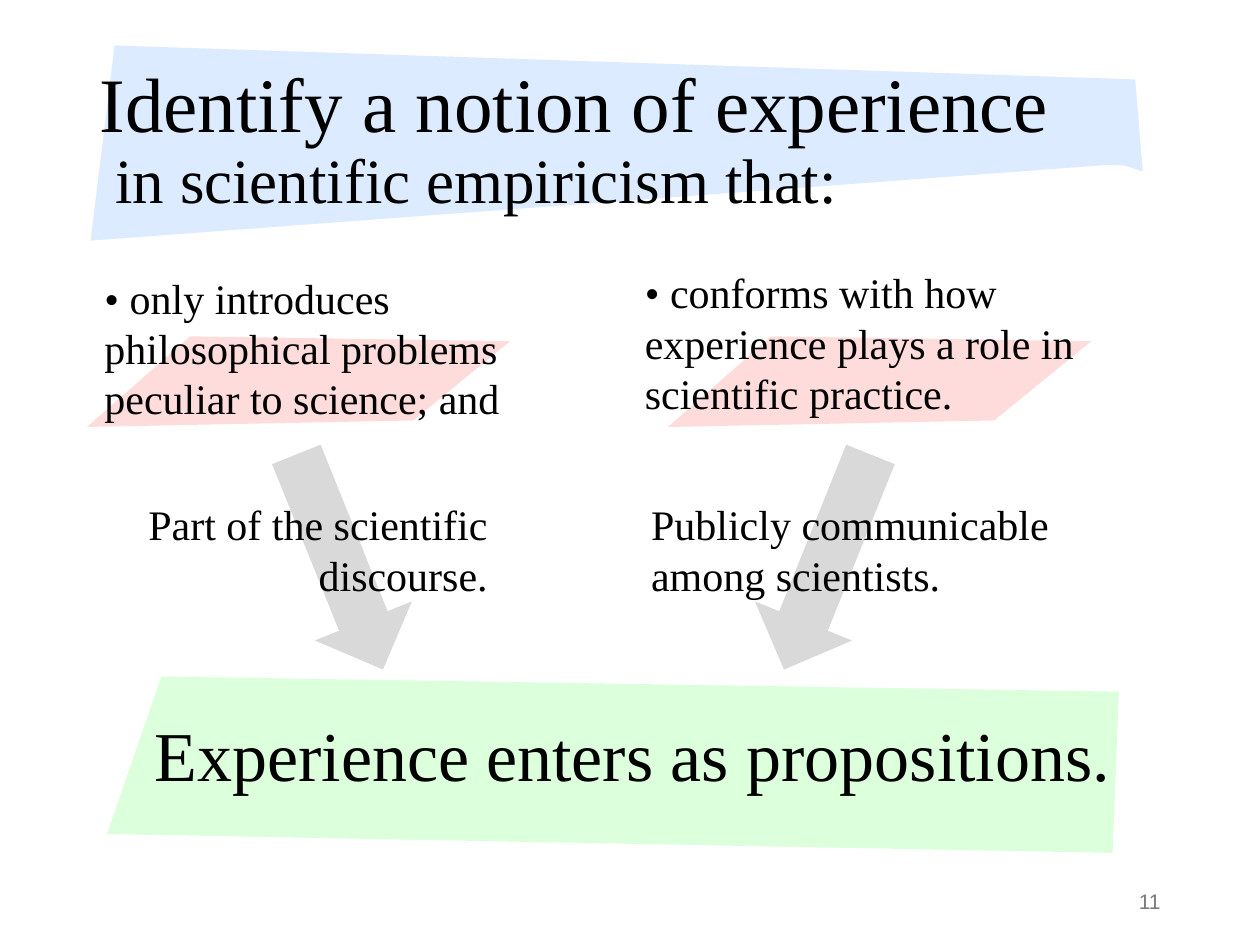
from dataclasses import dataclass

from pptx import Presentation
from pptx.dml.color import RGBColor
from pptx.enum.shapes import MSO_SHAPE
from pptx.enum.text import MSO_ANCHOR, MSO_AUTO_SIZE, PP_ALIGN
from pptx.util import Pt


@dataclass(frozen=True)
class Theme:
    serif: str = "Times New Roman"
    sans: str = "Arial"
    ink: str = "000000"
    muted: str = "797979"
    blue: str = "DCEBFF"
    pink: str = "FFDCDC"
    green: str = "DCFFDC"
    gray: str = "D9D9D9"
    head: int = 44
    sub: int = 36
    claim: int = 40
    body: int = 24
    note: int = 12


class Board:
    def __init__(self, slide, theme):
        self.slide, self.theme = slide, theme
        self.shapes = slide.shapes

    def style(self, item, **values):
        for name, value in values.items():
            setattr(item, name, value)

    def font(self, run, size, face=None, color=None):
        self.style(run.font, size=Pt(size), name=face or self.theme.serif)
        run.font.color.rgb = RGBColor.from_string(color or self.theme.ink)

    def place(self, shape, box):
        names = ("left", "top", "width", "height")
        self.style(shape, **dict(zip(names, map(Pt, box))))

    def paint(self, shape, color):
        shape.shadow.inherit = False
        shape.fill.solid()
        shape.fill.fore_color.rgb = RGBColor.from_string(color)
        shape.line.fill.background()

    def patch(self, points, color, shift=0):
        """Draw a filled outline, moved right by shift points."""
        dots = [(Pt(x + shift), Pt(y)) for x, y in points]
        pen = self.shapes.build_freeform(*dots[0])
        pen.add_line_segments(dots[1:], close=True)
        self.paint(pen.convert_to_shape(), color)

    def title(self, box, lines):
        """Fill the title with (text, size) lines and bring it to the front."""
        shape = self.shapes.title
        self.place(shape, box)
        frame = shape.text_frame
        self.style(frame, word_wrap=True, vertical_anchor=MSO_ANCHOR.MIDDLE,
                   auto_size=MSO_AUTO_SIZE.NONE)
        para = frame.paragraphs[0]
        self.style(para, alignment=PP_ALIGN.LEFT, line_spacing=0.9)
        for i, (text, size) in enumerate(lines):
            if i:
                para.add_line_break()
            run = para.add_run()
            run.text = text
            self.font(run, size)
        self.shapes[-1]._element.addnext(shape._element)

    def text(self, box, words, size, align=PP_ALIGN.LEFT, wrap=True,
             anchor=MSO_ANCHOR.TOP, fit=MSO_AUTO_SIZE.SHAPE_TO_FIT_TEXT,
             face=None, color=None):
        frame = self.shapes.add_textbox(*map(Pt, box)).text_frame
        self.style(frame, word_wrap=wrap, vertical_anchor=anchor, auto_size=fit)
        para = frame.paragraphs[0]
        para.alignment = align
        run = para.add_run()
        run.text = words
        self.font(run, size, face, color)

    def arrow(self, box, turn):
        shape = self.shapes.add_shape(MSO_SHAPE.DOWN_ARROW, *map(Pt, box))
        shape.rotation = turn
        self.paint(shape, self.theme.gray)


def main():
    deck = Presentation()
    deck.slide_width, deck.slide_height = Pt(720), Pt(540)
    look = Theme()
    board = Board(deck.slides.add_slide(deck.slide_layouts[5]), look)

    board.patch([(65.5, 26), (648.7, 45.4), (653, 98), (645.6, 95.5),
                 (641.8, 94.5), (632.2, 94.3), (51.8, 137.5)], look.blue)
    board.title((49.7, 28.8, 620.6, 104.4),
                [("Identify a notion of experience", look.head),
                 (" in scientific empiricism that:", look.sub)])

    slant = [(291.6, 195), (236.2, 240.3), (49.7, 244), (108.7, 192.2)]
    aims = [
        (0, (52.6, 151.9, 306, 94.3),
         "• only introduces philosophical problems peculiar to science; and"),
        (332, (361.4, 149, 318.2, 94.3),
         "• conforms with how experience plays a role in scientific practice."),
    ]
    for shift, box, words in aims:
        board.patch(slant, look.pink, shift)
        board.text(box, words, look.body)

    board.patch([(92.2, 386.6), (639.4, 395.3), (635.8, 487.4),
                 (61.2, 476.6)], look.green)
    board.text((81.4, 403.2, 566.6, 55.4), "Experience enters as propositions.",
               look.claim, wrap=False)

    steps = [
        (164.2, -21.9, (55.4, 281.5, 230.4, 65.5),
         "Part of the scientific discourse.", PP_ALIGN.RIGHT),
        (442.8, 21.9, (365, 281.5, 252, 65.5),
         "Publicly communicable among scientists.", PP_ALIGN.LEFT),
    ]
    for left, turn, box, words, align in steps:
        board.arrow((left, 254.9, 59.8, 132.5), turn)
        board.text(box, words, look.body, align)

    board.text((508.3, 500.4, 162, 28.8), "11", look.note, PP_ALIGN.RIGHT,
               anchor=MSO_ANCHOR.MIDDLE, fit=MSO_AUTO_SIZE.NONE,
               face=look.sans, color=look.muted)
    deck.save("out.pptx")


if __name__ == "__main__":
    main()
